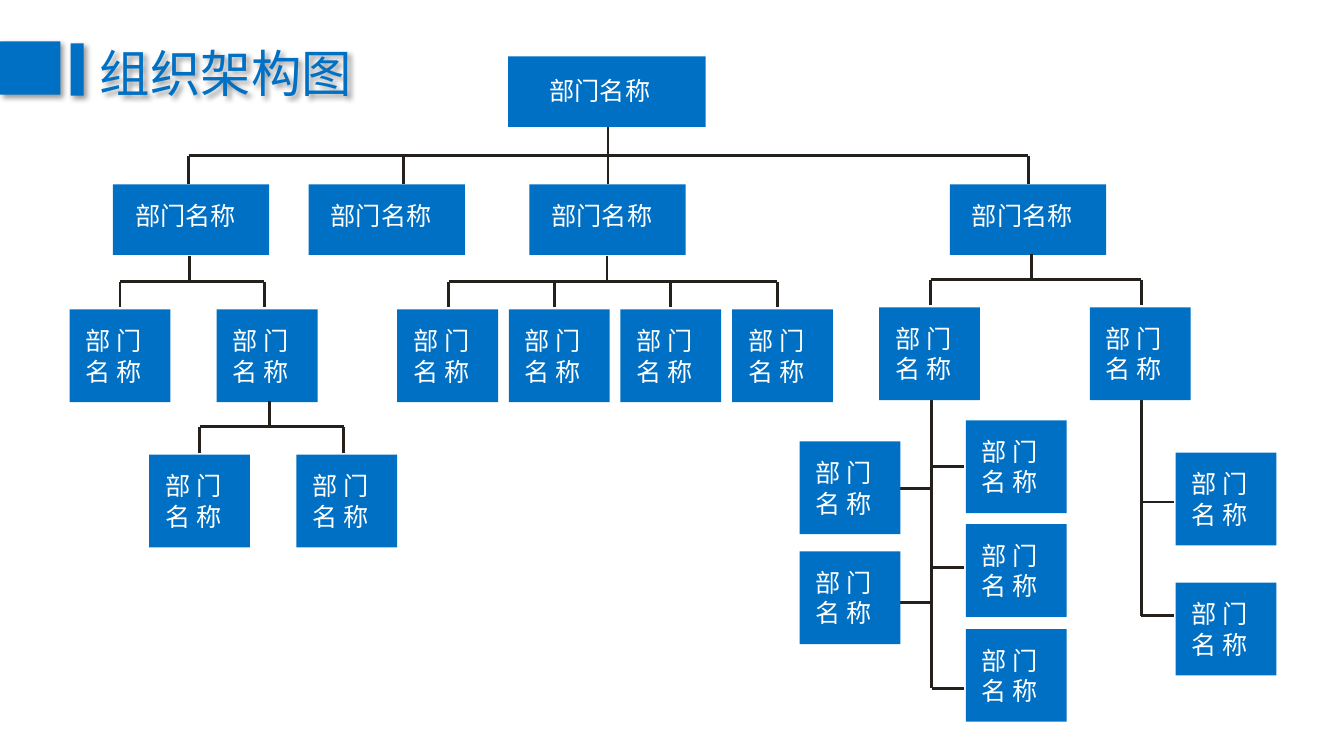
from lxml import etree
from pptx import Presentation
from pptx.dml.color import RGBColor
from pptx.enum.shapes import MSO_CONNECTOR, MSO_SHAPE
from pptx.enum.text import MSO_ANCHOR, PP_ALIGN
from pptx.oxml.ns import qn
from pptx.util import Inches, Pt

RECTANGLE = MSO_SHAPE.RECTANGLE
STRAIGHT = MSO_CONNECTOR.STRAIGHT
TOP, MIDDLE = MSO_ANCHOR.TOP, MSO_ANCHOR.MIDDLE
LEFT = PP_ALIGN.LEFT
COLORS = {"blue": "0070C4", "line": "24211D", "white": "FFFFFF", "shadow": "000000"}
FONT = "Noto Sans CJK SC"
CARD_WIDTH, CARD_HEIGHT = 1, 0.92
LEVEL_HEIGHT = 0.7
LINE_PITCH = 21.6


def color(name):
    return RGBColor.from_string(COLORS[name])


def format_text(text_frame, size, color_name):
    for paragraph in text_frame.paragraphs:
        paragraph.alignment = LEFT
        for run in paragraph.runs:
            run.font.size = Pt(size)
            run.font.color.rgb = color(color_name)
            run.font.name = FONT
            properties = run.font._element
            east_asian = etree.SubElement(properties, qn("a:ea"))
            east_asian.set("typeface", FONT)


def add_soft_shadow(shape):
    shape.shadow.inherit = False
    effects = shape.element.spPr.find(qn("a:effectLst"))
    shadow = etree.SubElement(effects, qn("a:outerShdw"), blurRad=str(Pt(4)),
                              dist=str(Pt(3)), dir="2700000", algn="tl", rotWithShape="0")
    shade = etree.SubElement(shadow, qn("a:srgbClr"), val=COLORS["shadow"])
    etree.SubElement(shade, qn("a:alpha"), val="40000")


def add_block(slide, left, top, width, height):
    block = slide.shapes.add_shape(
        RECTANGLE, Inches(left), Inches(top), Inches(width), Inches(height))
    block.shadow.inherit = False
    block.fill.solid()
    block.fill.fore_color.rgb = color("blue")
    block.line.fill.background()
    return block


def add_label_block(slide, box, text, inset_left, inset_top):
    text_frame = add_block(slide, *box).text_frame
    text_frame.word_wrap = True
    text_frame.vertical_anchor = TOP
    text_frame.margin_left, text_frame.margin_top = Inches(inset_left), Inches(inset_top)
    text_frame.margin_right = text_frame.margin_bottom = 0
    text_frame.text = text
    format_text(text_frame, 18, "white")
    for paragraph in text_frame.paragraphs:
        paragraph.line_spacing = Pt(LINE_PITCH)


def add_division(slide, left, top):
    add_label_block(slide, (left, top, 1.55, LEVEL_HEIGHT), "部门名称", 0.22, 0.16)


def add_card(slide, left, top):
    add_label_block(slide, (left, top, CARD_WIDTH, CARD_HEIGHT), "部 门\n名 称", 0.16, 0.16)


def add_line(slide, x1, y1, x2, y2):
    line = slide.shapes.add_connector(
        STRAIGHT, Inches(x1), Inches(y1), Inches(x2), Inches(y2))
    line.line.color.rgb = color("line")
    line.line.width = Pt(0)
    etree.SubElement(line.element.spPr, qn("a:effectLst"))


def add_fork(slide, parent_x, top, child_xs, drop):
    """Join a parent to its children through a horizontal bar halfway down."""
    bar_y = top + drop / 2
    add_line(slide, parent_x, top, parent_x, bar_y)
    add_line(slide, child_xs[0], bar_y, child_xs[-1], bar_y)
    for child_x in child_xs:
        add_line(slide, child_x, bar_y, child_x, top + drop)


def add_title(slide, left, top):
    for offset_x, offset_y, width, height in ((0, 0, 0.6, 0.53), (0.7, 0.02, 0.13, 0.52)):
        add_soft_shadow(add_block(slide, left + offset_x, top + offset_y, width, height))
    title = slide.shapes.title
    title.left, title.top = Inches(left + 0.89), Inches(top - 0.05)
    title.width, title.height = Inches(2.73), Inches(0.71)
    title.text_frame.text = "组织架构图"
    title.text_frame.word_wrap = False
    title.text_frame.vertical_anchor = MIDDLE
    format_text(title.text_frame, 36, "blue")
    add_soft_shadow(title)


def add_top_levels(slide, left, top):
    add_fork(slide, left + 4.91, top + LEVEL_HEIGHT,
             [left + x for x in (0.75, 2.88, 4.91, 9.08)], 0.57)
    add_label_block(slide, (left + 3.92, top, 1.96, LEVEL_HEIGHT), "部门名称", 0.41, 0.19)
    for offset in (0, 1.94, 4.13, 8.3):
        add_division(slide, left + offset, top + 1.27)


def add_branch(slide, left, top, parent_x, card_offsets, drop_offsets):
    """Draw a fork from parent_x and the row of cards hanging under it."""
    add_fork(slide, parent_x, top, [left + x for x in drop_offsets], 0.51)
    for offset in card_offsets:
        add_card(slide, left + offset, top + 0.53)


def add_trunk(slide, x, top, left_side, right_side):
    """Draw a vertical trunk; each side lists (card top, twig) offsets from top."""
    bottom = max(twig for _, twig in left_side + right_side)
    add_line(slide, x, top, x, top + bottom)
    for card_top, twig in left_side:
        add_line(slide, x - 0.33, top + twig, x - 0.02, top + twig)
        add_card(slide, x - 1.31, top + card_top)
    for card_top, twig in right_side:
        add_line(slide, x, top + twig, x + 0.32, top + twig)
        add_card(slide, x + 0.34, top + card_top)


def build_organisation_slide(presentation):
    slide = presentation.slides.add_slide(presentation.slide_layouts[5])
    add_title(slide, 0, 0.41)
    add_top_levels(slide, 1.12, 0.56)
    pair_cards, pair_drops = (0, 1.46), (0.5, 1.93)
    add_branch(slide, 0.69, 2.54, 1.88, pair_cards, pair_drops)
    add_branch(slide, 1.48, 3.98, 2.67, pair_cards, pair_drops)
    add_branch(slide, 3.94, 2.54, 6.02,
               [1.107 * index for index in range(4)], (0.51, 1.56, 2.71, 3.77))
    add_trunk(slide, 9.24, 3.97, [(0.41, 0.88), (1.5, 2.01)],
              [(0.2, 0.66), (1.23, 1.66), (2.27, 2.86)])
    add_trunk(slide, 11.32, 3.97, [], [(0.52, 1.01), (1.81, 2.14)])
    add_branch(slide, 8.72, 2.52, 10.23, (0, 2.09), (0.51, 2.6))


def main():
    presentation = Presentation()
    presentation.slide_width, presentation.slide_height = Inches(13.33), Inches(7.5)
    build_organisation_slide(presentation)
    presentation.save("out.pptx")


if __name__ == "__main__":
    main()
